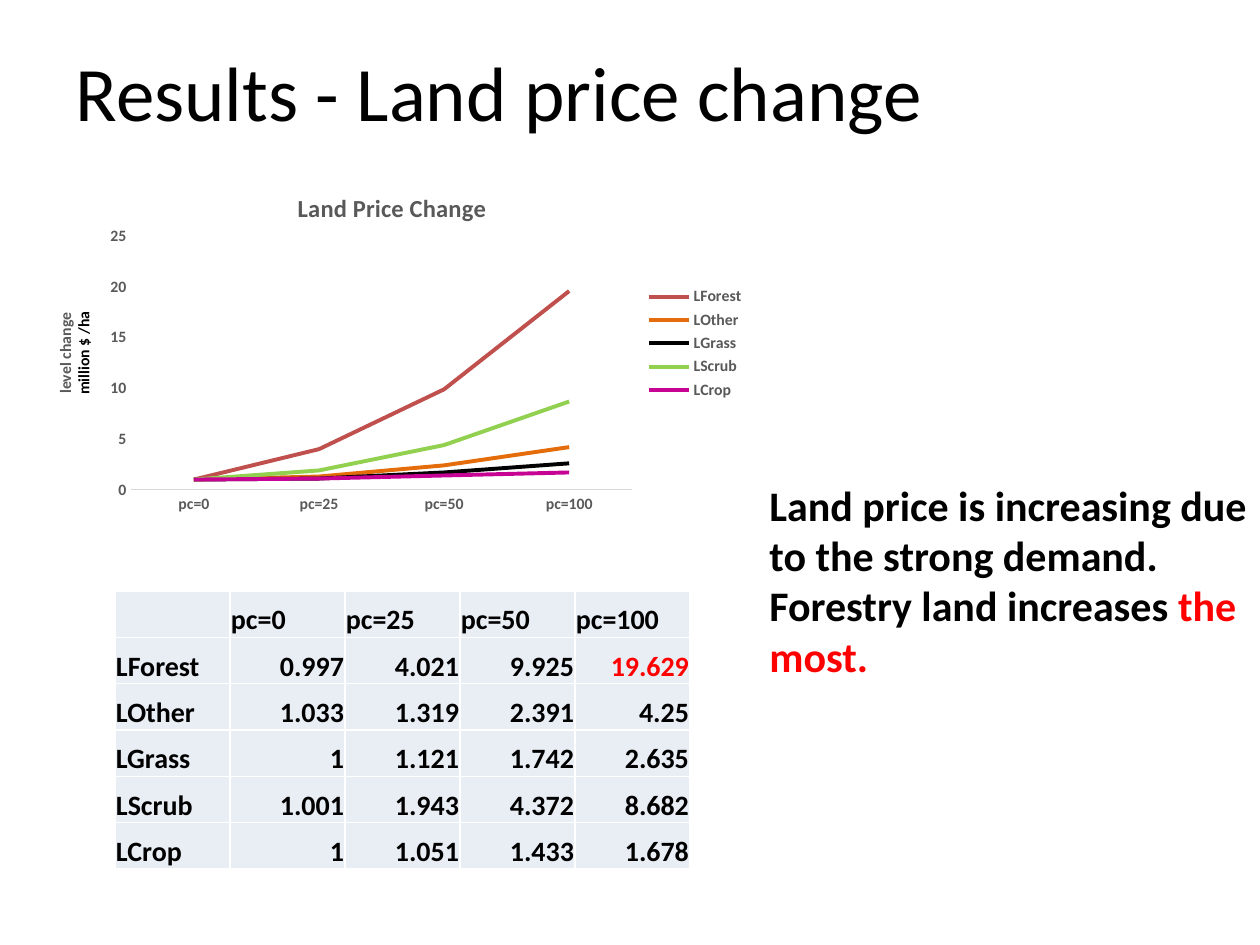
from lxml.etree import SubElement
from pptx import Presentation
from pptx.chart.data import CategoryChartData
from pptx.dml.color import RGBColor
from pptx.enum.chart import XL_CHART_TYPE as ChartType
from pptx.enum.chart import XL_LEGEND_POSITION as LegendPos
from pptx.enum.chart import XL_MARKER_STYLE as Marker
from pptx.enum.chart import XL_TICK_MARK as Tick
from pptx.enum.text import MSO_ANCHOR as Anchor
from pptx.enum.text import PP_ALIGN as Align
from pptx.oxml.ns import qn
from pptx.util import Pt

PX = 914400 / 126
FONT = "Calibri"
COLORS = {
    "text": "000000", "muted": "595959", "accent": "FF0000", "axis": "D9D9D9",
    "cell": "E9EDF4", "border": "FFFFFF",
    "LForest": "C0504D", "LOther": "E46C0A", "LGrass": "000000",
    "LScrub": "92D050", "LCrop": "C70394",
}
SCENARIOS = ["pc=0", "pc=25", "pc=50", "pc=100"]
PRICES = {
    "LForest": [0.997, 4.021, 9.925, 19.629],
    "LOther": [1.033, 1.319, 2.391, 4.25],
    "LGrass": [1, 1.121, 1.742, 2.635],
    "LScrub": [1.001, 1.943, 4.372, 8.682],
    "LCrop": [1, 1.051, 1.433, 1.678],
}


def px(*lengths):
    return [round(n * PX) for n in lengths]


def rgb(name):
    return RGBColor.from_string(COLORS[name])


def style(font, size, color="text", bold=True):
    font.name, font.size, font.bold = FONT, Pt(size), bold
    font.color.rgb = rgb(color)


def write(p, text, size, color="text", bold=True, align=None):
    if align is not None:
        p.alignment = align
    r = p.add_run()
    r.text = text
    style(r.font, size, color, bold)


def add_title(slide, box):
    s = slide.shapes.title
    s.left, s.top, s.width, s.height = px(*box)
    tf = s.text_frame
    tf.vertical_anchor = Anchor.TOP
    write(tf.paragraphs[0], "Results - Land price change", 44, bold=False, align=Align.LEFT)


def add_comment(slide, box):
    tf = slide.shapes.add_textbox(*px(*box)).text_frame
    tf.word_wrap = True
    p = tf.paragraphs[0]
    write(p, "Land price is increasing due to the strong demand. Forestry land increases ", 24)
    write(p, "the most.", 24, "accent")


def set_layout(element, **place):
    for old in element.findall(qn("c:layout")):
        element.remove(old)
    layout = SubElement(element, qn("c:layout"))
    manual = SubElement(layout, qn("c:manualLayout"))
    options = {"xMode": "edge", "yMode": "edge", **place}
    if "w" in place:
        options = {"layoutTarget": "inner", **options}
    for tag, value in options.items():
        SubElement(manual, qn(f"c:{tag}")).set("val", str(value))
    tx = element.find(qn("c:tx"))
    if tx is None:
        element.insert(0, layout)
    else:
        tx.addnext(layout)


def add_price_chart(slide, box):
    data = CategoryChartData()
    data.categories = SCENARIOS
    for land, prices in PRICES.items():
        data.add_series(land, [round(v, 1) for v in prices])
    chart = slide.shapes.add_chart(ChartType.LINE, *px(*box), data).chart
    style(chart.font, 10, bold=False)

    chart.has_title = True
    write(chart.chart_title.text_frame.paragraphs[0], "Land Price Change", 14, "muted")

    chart.has_legend = True
    chart.legend.position = LegendPos.RIGHT
    chart.legend.include_in_layout = False
    style(chart.legend.font, 9, "muted")

    cat_axis, val_axis = chart.category_axis, chart.value_axis
    for axis in (cat_axis, val_axis):
        axis.major_tick_mark = axis.minor_tick_mark = Tick.NONE
        axis.has_major_gridlines = False
        style(axis.tick_labels.font, 9, "muted")
    cat_axis.format.line.color.rgb = rgb("axis")
    cat_axis.format.line.width = Pt(0.75)
    val_axis.format.line.fill.background()
    val_axis.minimum_scale, val_axis.maximum_scale, val_axis.major_unit = 0, 25, 5

    tf = val_axis.axis_title.text_frame
    write(tf.paragraphs[0], "level change", 9, "muted")
    write(tf.add_paragraph(), "million $ /ha", 9)

    plot = chart.plots[0]
    plot.vary_by_categories = False
    for series in plot.series:
        series.smooth = False
        series.marker.style = Marker.NONE
        series.format.line.color.rgb = rgb(series.name)
        series.format.line.width = Pt(2.25)

    root = chart.element if hasattr(chart, "element") else chart._chartSpace
    axis_title = root.find(f".//{qn('c:valAx')}/{qn('c:title')}")
    body = axis_title.find(f".//{qn('a:bodyPr')}")
    body.set("rot", "-5400000")
    body.set("vert", "horz")
    set_layout(axis_title, x=0.04, y=0.4)
    set_layout(root.find(f"{qn('c:chart')}/{qn('c:title')}"), x=0.37, y=0.06)
    set_layout(root.find(f".//{qn('c:plotArea')}"), x=0.15, y=0.2, w=0.68, h=0.71)


def set_borders(cell):
    tc_pr = cell._tc.get_or_add_tcPr()
    for tag in ("lnL", "lnR", "lnT", "lnB"):
        line = SubElement(tc_pr, qn(f"a:{tag}"), w=str(Pt(1)))
        fill = SubElement(line, qn("a:solidFill"))
        SubElement(fill, qn("a:srgbClr"), val=COLORS["border"])


def add_price_table(slide, box):
    rows = [["", *SCENARIOS]] + [[land, *prices] for land, prices in PRICES.items()]
    highest = max(max(prices) for prices in PRICES.values())
    table = slide.shapes.add_table(len(rows), len(rows[0]), *px(*box)).table
    for i, row in enumerate(rows):
        for j, value in enumerate(row):
            cell = table.cell(i, j)
            cell.vertical_anchor = Anchor.BOTTOM
            cell.margin_left, cell.margin_right, cell.margin_top, cell.margin_bottom = px(1, 1, 1, 0)
            set_borders(cell)
            cell.fill.solid()
            cell.fill.fore_color.rgb = rgb("cell")
            if value != "":
                write(cell.text_frame.paragraphs[0], str(value), 16,
                      "accent" if value == highest else "text",
                      align=Align.RIGHT if i and j else Align.LEFT)


def main():
    prs = Presentation()
    prs.slide_width, prs.slide_height = px(1260, 945)
    slide = prs.slides.add_slide(prs.slide_layouts[5])
    add_title(slide, (63, 38, 1134, 158))
    add_comment(slide, (757, 473, 503, 217))
    add_price_chart(slide, (21, 165, 736, 357))
    add_price_table(slide, (115, 591, 575, 278))
    prs.save("out.pptx")


if __name__ == "__main__":
    main()
